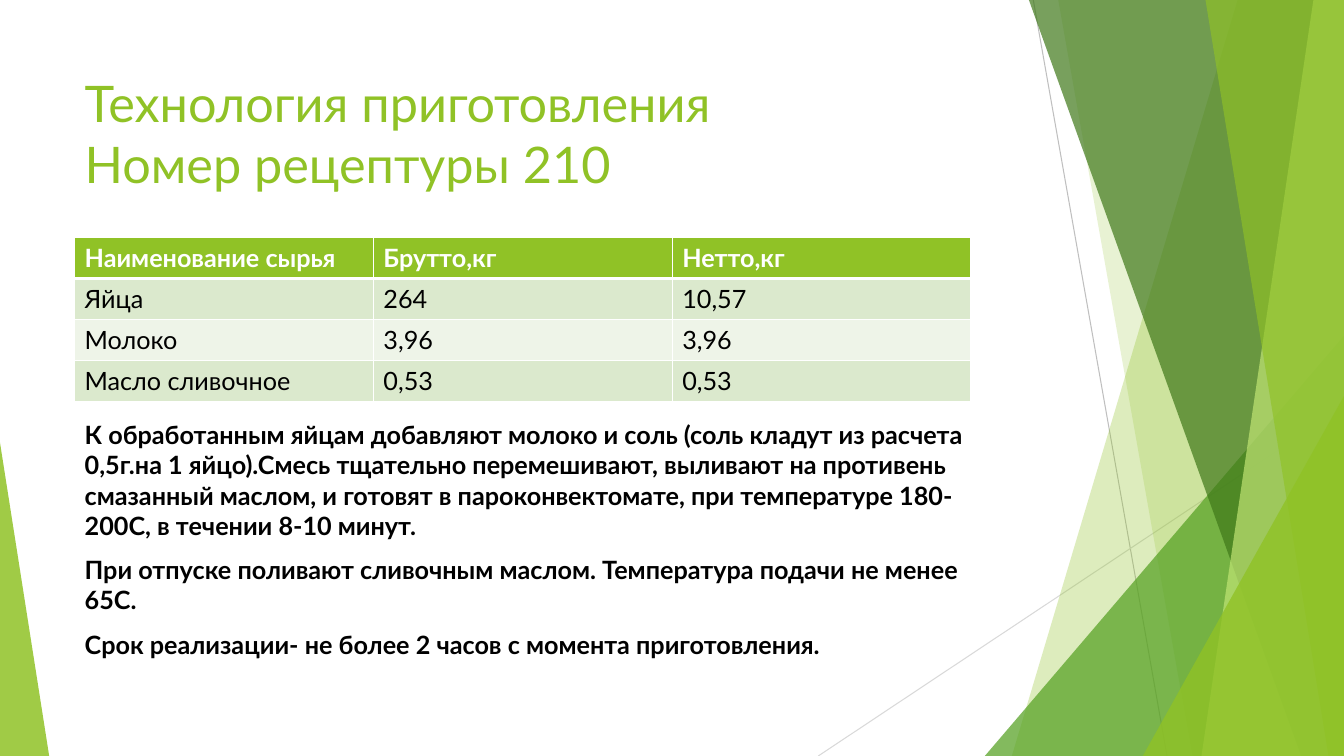
import pptx
import pptx.util
import pptx.dml.color
import pptx.enum.shapes
import pptx.enum.text
import pptx.oxml.ns
import pptx.oxml.xmlchemy

Cm, Pt = pptx.util.Cm, pptx.util.Pt
RGBColor = pptx.dml.color.RGBColor
qn = pptx.oxml.ns.qn
new_element = pptx.oxml.xmlchemy.OxmlElement

GREEN = RGBColor(0x90, 0xC2, 0x26)
LEAF = RGBColor(0x54, 0xA0, 0x21)
FOREST = RGBColor(0x3F, 0x78, 0x19)
LIME = RGBColor(0xC0, 0xE4, 0x74)
ROW_DARK = RGBColor(0xDB, 0xE9, 0xCD)
ROW_LIGHT = RGBColor(0xEE, 0xF4, 0xE8)
GREY = RGBColor(0xBF, 0xBF, 0xBF)
PALE_GREY = RGBColor(0xD9, 0xD9, 0xD9)
BLACK = RGBColor(0, 0, 0)
WHITE = RGBColor(0xFF, 0xFF, 0xFF)
FONT = "Lato"

WIDTH, HEIGHT = 33.87, 19.05
LEFT = 1.88
TEXT_WIDTH = 23.88
TABLE_TOP, COLUMN_WIDTH, ROW_HEIGHT = 5.99, 7.53, 1.03

TITLE = "Технология приготовления \vНомер рецептуры 210"
INGREDIENTS = [
    ("Наименование сырья", "Брутто,кг", "Нетто,кг"),
    ("Яйца", "264", "10,57"),
    ("Молоко", "3,96", "3,96"),
    ("Масло сливочное", "0,53", "0,53"),
]
STEPS = [
    "К обработанным яйцам добавляют молоко и соль (соль кладут из расчета "
    "0,5г.на 1 яйцо).Смесь тщательно перемешивают, выливают на противень "
    "смазанный маслом, и готовят в пароконвектомате, при температуре "
    "180-200С, в течении 8-10 минут.",
    "При отпуске поливают сливочным маслом. Температура подачи не менее 65С.",
    "Срок реализации- не более 2 часов с момента приготовления.",
]

# start x, start y, end x, end y, colour
THIN_LINES = [
    (26.04, 0, 29.41, HEIGHT, GREY),
    (WIDTH, 10.24, 20.62, HEIGHT, PALE_GREY),
]
# bands: top left x, bottom left x; triangles: left, width, height, apex
FACETS = [
    ("band", (31.19, 25.5), GREEN, 30),
    ("band", (26.67, 30.05), GREEN, 20),
    ("triangle", (24.82, 9.05, 10.59, 1), LEAF, 72),
    ("band", (25.93, 32.79), FOREST, 70),
    ("band", (33.1, 30.28), LIME, 70),
    ("band", (30.38, 33.48), GREEN, 65),
    ("triangle", (28.8, 5.07, 9.07, 1), GREEN, 80),
    ("triangle", (0, 1.24, 7.9, 0), GREEN, 85),
]


def style_text(paragraph, size, color, bold=False):
    for span in paragraph.runs:
        span.font.name = FONT
        span.font.size = Pt(size)
        span.font.bold = bold
        span.font.color.rgb = color


def add_thin_line(page, x1, y1, x2, y2, color):
    line = page.shapes.add_connector(
        pptx.enum.shapes.MSO_CONNECTOR.STRAIGHT, Cm(x1), Cm(y1), Cm(x2), Cm(y2))
    line.line.color.rgb = color
    line.line.width = Pt(0.75)
    line.element.spPr.append(new_element("a:effectLst"))


def add_band(page, top_x, bottom_x):
    """Add a facet that reaches the right edge of the page."""
    outline = page.shapes.build_freeform(Cm(top_x), 0)
    outline.add_line_segments([
        (Cm(WIDTH), 0), (Cm(WIDTH), Cm(HEIGHT)), (Cm(bottom_x), Cm(HEIGHT))])
    return outline.convert_to_shape()


def add_triangle(page, left, width, height, apex):
    """Add a triangle that stands on the bottom edge of the page."""
    triangle = page.shapes.add_shape(
        pptx.enum.shapes.MSO_SHAPE.ISOSCELES_TRIANGLE,
        Cm(left), Cm(HEIGHT - height), Cm(width), Cm(height))
    triangle.adjustments[0] = apex
    return triangle


def paint(shape, color, opacity):
    shape.shadow.inherit = False
    shape.fill.solid()
    shape.fill.fore_color.rgb = color
    shape.line.fill.background()
    alpha = new_element("a:alpha")
    alpha.set("val", str(opacity * 1000))
    shape.element.spPr.find(qn("a:solidFill")).find(qn("a:srgbClr")).append(alpha)


def add_border(cell, side, points):
    border = new_element("a:ln" + side)
    border.set("w", str(int(Pt(points))))
    fill = new_element("a:solidFill")
    color = new_element("a:srgbClr")
    color.set("val", str(WHITE))
    fill.append(color)
    border.append(fill)
    cell._tc.get_or_add_tcPr().append(border)


def add_ingredients(page):
    rows, columns = len(INGREDIENTS), len(INGREDIENTS[0])
    table = page.shapes.add_table(
        rows, columns, Cm(LEFT), Cm(TABLE_TOP),
        Cm(COLUMN_WIDTH * columns), Cm(ROW_HEIGHT * rows)).table
    for row, values in enumerate(INGREDIENTS):
        header = row == 0
        for column, value in enumerate(values):
            cell = table.cell(row, column)
            cell.text_frame.text = value
            style_text(cell.text_frame.paragraphs[0], 18,
                       WHITE if header else BLACK, header)
            add_border(cell, "L", 1)
            add_border(cell, "R", 1)
            add_border(cell, "T", 3 if row == 1 else 1)
            add_border(cell, "B", 3 if header else 1)
            cell.fill.solid()
            cell.fill.fore_color.rgb = (
                GREEN if header else ROW_DARK if row % 2 else ROW_LIGHT)


def place_text(box, top, height, text):
    """Move a placeholder, bring it forward and fill it with text."""
    box.left, box.top = Cm(LEFT), Cm(top)
    box.width, box.height = Cm(TEXT_WIDTH), Cm(height)
    frame = box.text_frame
    frame.text = text
    frame.word_wrap = True
    frame.auto_size = pptx.enum.text.MSO_AUTO_SIZE.NONE
    frame.vertical_anchor = pptx.enum.text.MSO_ANCHOR.TOP
    box.element.getparent().append(box.element)
    return frame.paragraphs


def main():
    deck = pptx.Presentation()
    deck.slide_width, deck.slide_height = Cm(WIDTH), Cm(HEIGHT)
    page = deck.slides.add_slide(deck.slide_layouts[1])

    for line in THIN_LINES:
        add_thin_line(page, *line)
    for kind, geometry, color, opacity in FACETS:
        add_facet = add_band if kind == "band" else add_triangle
        paint(add_facet(page, *geometry), color, opacity)

    steps = place_text(page.placeholders[1], 10.44, 6.5, "\n".join(STEPS))
    for number, paragraph in enumerate(steps):
        properties = paragraph._p.get_or_add_pPr()
        properties.set("marL", "0")
        properties.set("indent", "0")
        properties.append(new_element("a:buNone"))
        paragraph.space_before = Pt(10 if number else 0)
        style_text(paragraph, 18, BLACK, True)

    for paragraph in place_text(page.shapes.title, 1.7, 3.66, TITLE):
        paragraph.alignment = pptx.enum.text.PP_ALIGN.LEFT
        style_text(paragraph, 36, GREEN)

    add_ingredients(page)
    deck.save("out.pptx")


if __name__ == "__main__":
    main()
